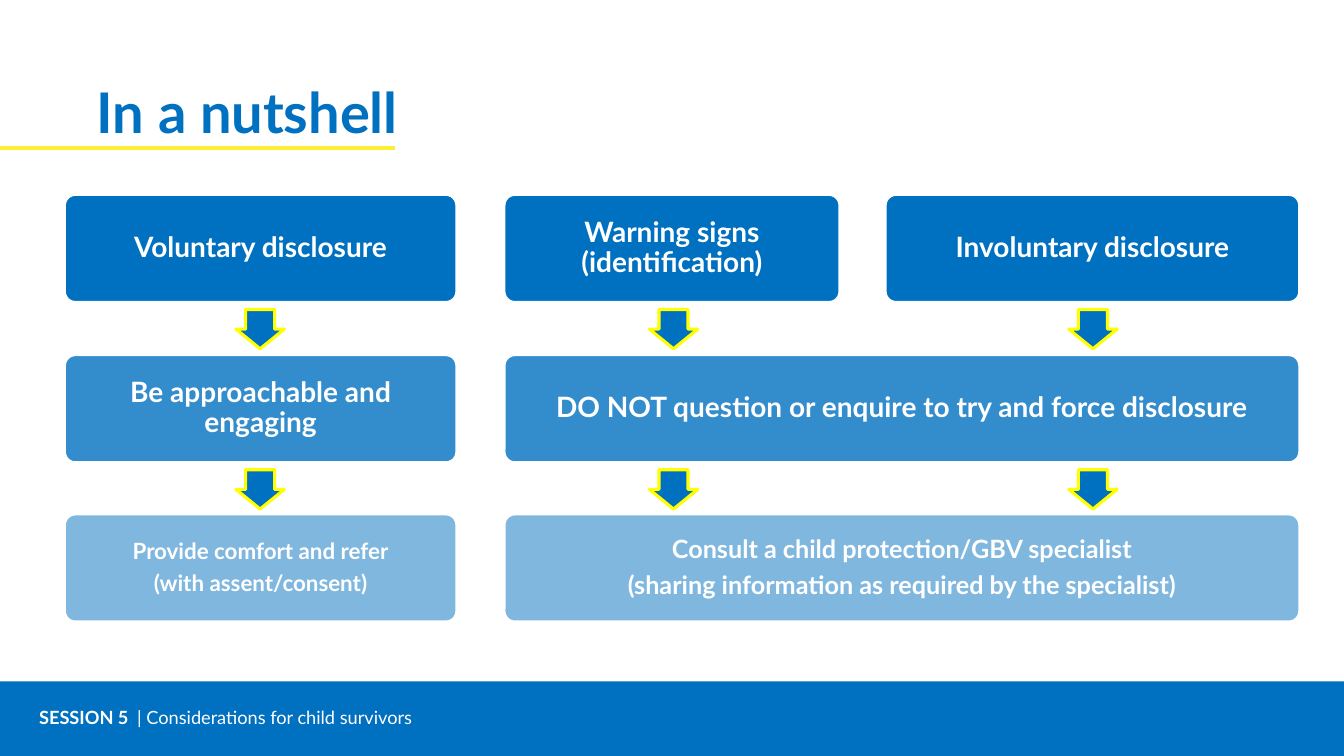
from lxml import etree
from pptx import Presentation
from pptx.dml.color import RGBColor
from pptx.enum.shapes import MSO_CONNECTOR, MSO_SHAPE
from pptx.enum.text import MSO_ANCHOR, MSO_AUTO_SIZE, PP_ALIGN
from pptx.oxml.ns import qn
from pptx.util import Inches, Pt

RECTANGLE = MSO_SHAPE.RECTANGLE
ROUNDED = MSO_SHAPE.ROUNDED_RECTANGLE
DOWN_ARROW = MSO_SHAPE.DOWN_ARROW
STRAIGHT = MSO_CONNECTOR.STRAIGHT
LEFT, CENTER = PP_ALIGN.LEFT, PP_ALIGN.CENTER
TOP, MIDDLE, BOTTOM = MSO_ANCHOR.TOP, MSO_ANCHOR.MIDDLE, MSO_ANCHOR.BOTTOM
NO_AUTOFIT = MSO_AUTO_SIZE.NONE

FONT = "Lato"
BLUE, WHITE, YELLOW, RULE_YELLOW = "0070C0", "FFFFFF", "FFFF00", "FBEF33"
SLIDE_WIDTH, SLIDE_HEIGHT = 13.33, 7.5
FOOTER_TOP = 6.76

BOX_HEIGHT = 1.07
ROW_TOPS = (1.93, 3.52, 5.1)
ROW_OPACITY = (100, 80, 50)
# Left edge and width of each column of boxes
VOLUNTARY = (0.64, 3.89)
WARNING = (5, 3.33)
INVOLUNTARY = (8.78, 4.11)
SHARED = (WARNING[0], sum(INVOLUNTARY) - WARNING[0])

BOXES = (  # row, column, paragraphs, text size
    (0, VOLUNTARY, ["Voluntary disclosure"], 20),
    (0, WARNING, ["Warning signs (identification)"], 20),
    (0, INVOLUNTARY, ["Involuntary disclosure"], 20),
    (1, VOLUNTARY, ["Be approachable and engaging"], 20),
    (1, SHARED, ["DO NOT question or enquire to try and force disclosure"], 20),
    (2, VOLUNTARY, ["Provide comfort and refer", "(with assent/consent)"], 16),
    (2, SHARED, ["Consult a child protection/GBV specialist",
                 "(sharing information as required by the specialist)"], 18),
)
ARROW_CENTERS = (2.58, 6.68, 10.84)
ARROW_WIDTH, ARROW_HEIGHT = 0.48, 0.39
ARROW_GAP = 0.07


def rgb(color):
    return RGBColor.from_string(color)


def write_text(shape, paragraphs, size, color=WHITE, align=LEFT, anchor=TOP,
               inset=None, line_spacing=None, before=0, after=0):
    """Fill a shape with paragraphs, each a list of (text, bold) runs."""
    frame = shape.text_frame
    frame.word_wrap = True
    frame.auto_size = NO_AUTOFIT
    frame.vertical_anchor = anchor
    if inset is not None:
        frame.margin_left = frame.margin_right = Inches(inset)
        frame.margin_top = frame.margin_bottom = Inches(inset)
    for index, runs in enumerate(paragraphs):
        paragraph = frame.add_paragraph() if index else frame.paragraphs[0]
        paragraph.alignment = align
        paragraph.line_spacing = line_spacing
        paragraph.space_before = Pt(before if index else 0)
        paragraph.space_after = Pt(after)
        for text, bold in runs:
            run = paragraph.add_run()
            run.text = text
            run.font.name = FONT
            run.font.size = Pt(size)
            run.font.bold = bold
            run.font.color.rgb = rgb(color)


def add_shape(slide, kind, left, top, width, height, line=None,
              line_width=1, opacity=100):
    shape = slide.shapes.add_shape(
        kind, Inches(left), Inches(top), Inches(width), Inches(height))
    shape.shadow.inherit = False
    shape.fill.solid()
    shape.fill.fore_color.rgb = rgb(BLUE)
    if opacity < 100:
        fill_color = shape.fill._xPr.find(qn("a:solidFill"))[0]
        etree.SubElement(fill_color, qn("a:alpha"), val=str(opacity * 1000))
    if line:
        shape.line.color.rgb = rgb(line)
        shape.line.width = Pt(line_width)
    else:
        shape.line.fill.background()
    return shape


def add_title(slide):
    title = slide.shapes.title
    title.left, title.top = Inches(0.86), Inches(0.77)
    title.width, title.height = Inches(12.06), Inches(0.72)
    write_text(title, [[("In a nutshell", True)]], 40, color=BLUE, anchor=BOTTOM)
    rule = slide.shapes.add_connector(
        STRAIGHT, 0, Inches(1.47), Inches(3.92), Inches(1.47))
    rule.line.color.rgb = rgb(RULE_YELLOW)
    rule.line.width = Pt(3)
    etree.SubElement(rule._element.spPr, qn("a:effectLst"))


def add_footer(slide):
    add_shape(slide, RECTANGLE, 0, FOOTER_TOP, SLIDE_WIDTH, SLIDE_HEIGHT - FOOTER_TOP)
    label = slide.shapes.add_textbox(
        Inches(0.29), Inches(6.96), Inches(6.96), Inches(0.32))
    write_text(label, [[("SESSION 5  ", True),
                        ("| Considerations for child survivors", False)]],
               13, anchor=MIDDLE)


def add_box(slide, row, column, lines, size):
    left, width = column
    box = add_shape(slide, ROUNDED, left, ROW_TOPS[row], width, BOX_HEIGHT,
                    line=WHITE, line_width=2, opacity=ROW_OPACITY[row])
    box.adjustments[0] = 0.1
    write_text(box, [[(line, True)] for line in lines], size, align=CENTER,
               anchor=MIDDLE, inset=0.11, line_spacing=0.9, after=0.35 * size)


def add_arrow(slide, center, row):
    """Point from the given row of boxes to the next one."""
    arrow = add_shape(slide, DOWN_ARROW, center - ARROW_WIDTH / 2,
                      ROW_TOPS[row] + BOX_HEIGHT + ARROW_GAP,
                      ARROW_WIDTH, ARROW_HEIGHT, line=YELLOW, line_width=2.25)
    arrow.adjustments[0] = 0.6
    arrow.adjustments[1] = 0.5


def main():
    presentation = Presentation()
    presentation.slide_width = Inches(SLIDE_WIDTH)
    presentation.slide_height = Inches(SLIDE_HEIGHT)
    slide = presentation.slides.add_slide(presentation.slide_layouts[5])
    add_footer(slide)
    add_title(slide)
    for row, column, lines, size in BOXES:
        add_box(slide, row, column, lines, size)
    for row in range(len(ROW_TOPS) - 1):
        for center in ARROW_CENTERS:
            add_arrow(slide, center, row)
    presentation.save("out.pptx")


if __name__ == "__main__":
    main()
